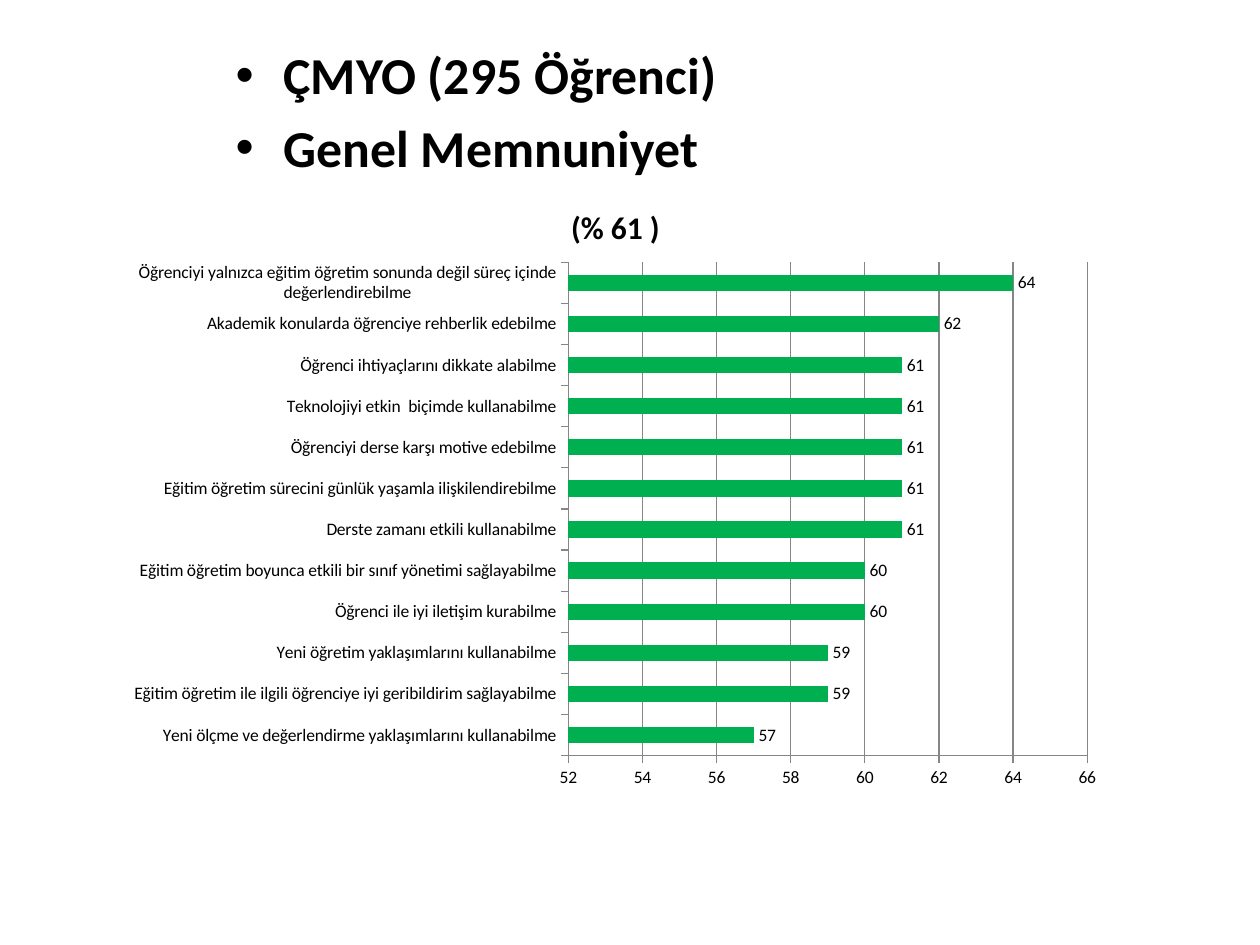
from dataclasses import dataclass

from lxml.etree import SubElement
from pptx import Presentation
from pptx.chart.data import CategoryChartData
from pptx.dml.color import RGBColor
from pptx.enum.chart import XL_CHART_TYPE, XL_LABEL_POSITION, XL_TICK_MARK
from pptx.enum.text import MSO_ANCHOR, MSO_AUTO_SIZE
from pptx.oxml.ns import qn
from pptx.util import Emu, Inches, Pt

WIDTH, HEIGHT = Inches(10), Inches(7.5)
FONT = "Calibri"
BLACK, GREEN, GRAY = "000000", "00B050", "868686"


@dataclass(frozen=True)
class Area:
    """A box given as shares of its container."""
    left: float
    top: float
    width: float
    height: float

    def lengths(self) -> tuple[Emu, Emu, Emu, Emu]:
        return (Emu(int(self.left * WIDTH)), Emu(int(self.top * HEIGHT)),
                Emu(int(self.width * WIDTH)), Emu(int(self.height * HEIGHT)))


@dataclass(frozen=True)
class Rating:
    skill: str
    percent: int


HEADING_AREA = Area(0.177, 0.039, 0.654, 0.157)
CHART_AREA = Area(0.091, 0.191, 0.795, 0.656)
PLOT_AREA = Area(0.453, 0.132, 0.518, 0.796)

HEADING = ["ÇMYO (295 Öğrenci)", "Genel Memnuniyet"]
RATINGS = [
    Rating("Yeni ölçme ve değerlendirme yaklaşımlarını kullanabilme", 57),
    Rating("Eğitim öğretim ile ilgili öğrenciye iyi geribildirim sağlayabilme", 59),
    Rating("Yeni öğretim yaklaşımlarını kullanabilme", 59),
    Rating("Öğrenci ile iyi iletişim kurabilme", 60),
    Rating("Eğitim öğretim boyunca etkili bir sınıf yönetimi sağlayabilme", 60),
    Rating("Derste zamanı etkili kullanabilme", 61),
    Rating("Eğitim öğretim sürecini günlük yaşamla ilişkilendirebilme", 61),
    Rating("Öğrenciyi derse karşı motive edebilme", 61),
    Rating("Teknolojiyi etkin  biçimde kullanabilme", 61),
    Rating("Öğrenci ihtiyaçlarını dikkate alabilme", 61),
    Rating("Akademik konularda öğrenciye rehberlik edebilme", 62),
    Rating("Öğrenciyi yalnızca eğitim öğretim sonunda değil süreç içinde "
           "değerlendirebilme", 64),
]


def rgb(color: str) -> RGBColor:
    return RGBColor.from_string(color)


def style_font(font, *, size: float, bold: bool = False, color: str = BLACK) -> None:
    font.name, font.size, font.bold = FONT, Pt(size), bold
    font.color.rgb = rgb(color)


def write(paragraph, text: str, **style) -> None:
    run = paragraph.add_run()
    run.text = text
    style_font(run.font, **style)


def style_line(line, color: str = GRAY) -> None:
    line.color.rgb = rgb(color)
    line.width = Pt(0.75)


def add_heading(body, lines: list[str]) -> None:
    body.left, body.top, body.width, body.height = HEADING_AREA.lengths()
    frame = body.text_frame
    frame.word_wrap = True
    frame.auto_size = MSO_AUTO_SIZE.NONE
    frame.vertical_anchor = MSO_ANCHOR.TOP
    for index, line in enumerate(lines):
        paragraph = frame.add_paragraph() if index else frame.paragraphs[0]
        paragraph.space_before = Pt(5.9)
        write(paragraph, line, size=29.6, bold=True)
        # Hanging bullet
        properties = paragraph._p.get_or_add_pPr()
        properties.set("marL", str(Inches(0.38)))
        properties.set("indent", str(-Inches(0.38)))
        SubElement(properties, qn("a:buFont"), typeface="Arial")
        SubElement(properties, qn("a:buChar"), char="•")


def fix_plot(chart, area: Area) -> None:
    """Pin the inner plot area inside the chart."""
    plot_area = chart._chartSpace.chart.plotArea
    for old in plot_area.findall(qn("c:layout")):
        plot_area.remove(old)
    layout = SubElement(plot_area, qn("c:layout"))
    plot_area.insert(0, layout)
    manual = SubElement(layout, qn("c:manualLayout"))
    settings = {"layoutTarget": "inner", "xMode": "edge", "yMode": "edge",
                "x": area.left, "y": area.top, "w": area.width, "h": area.height}
    for tag, value in settings.items():
        SubElement(manual, qn(f"c:{tag}"), val=str(value))


def add_ratings_chart(slide, ratings: list[Rating]) -> None:
    data = CategoryChartData(number_format="0")
    data.categories = [rating.skill for rating in ratings]
    data.add_series("Series 1", [rating.percent for rating in ratings])
    chart = slide.shapes.add_chart(
        XL_CHART_TYPE.BAR_CLUSTERED, *CHART_AREA.lengths(), data).chart
    style_font(chart.font, size=10)
    chart.has_legend = False
    chart.has_title = True
    write(chart.chart_title.text_frame.paragraphs[0], "(% 61 )", size=18, bold=True)
    chart.chart_title.include_in_layout = False
    fix_plot(chart, PLOT_AREA)

    # Axes
    scale = chart.value_axis
    scale.minimum_scale, scale.maximum_scale, scale.major_unit = 52, 66, 2
    scale.has_major_gridlines = True
    style_line(scale.major_gridlines.format.line)
    scale.tick_labels.number_format = "0"
    scale.tick_labels.number_format_is_linked = False
    for axis in (chart.category_axis, scale):
        axis.major_tick_mark = XL_TICK_MARK.OUTSIDE
        axis.minor_tick_mark = XL_TICK_MARK.NONE
        style_line(axis.format.line)

    # Bars and their values
    plot = chart.plots[0]
    plot.gap_width = 150
    plot.vary_by_categories = False
    bars = plot.series[0]
    bars.format.fill.solid()
    bars.format.fill.fore_color.rgb = rgb(GREEN)
    labels = bars.data_labels
    labels.show_value = True
    labels.number_format = "0"
    labels.number_format_is_linked = False
    labels.position = XL_LABEL_POSITION.OUTSIDE_END
    style_font(labels.font, size=10)


def main() -> None:
    deck = Presentation()
    deck.slide_width, deck.slide_height = WIDTH, HEIGHT
    slide = deck.slides.add_slide(deck.slide_layouts[1])
    unused_title = slide.shapes.title.element
    unused_title.getparent().remove(unused_title)
    add_heading(slide.placeholders[1], HEADING)
    add_ratings_chart(slide, RATINGS)
    deck.save("out.pptx")


if __name__ == "__main__":
    main()
